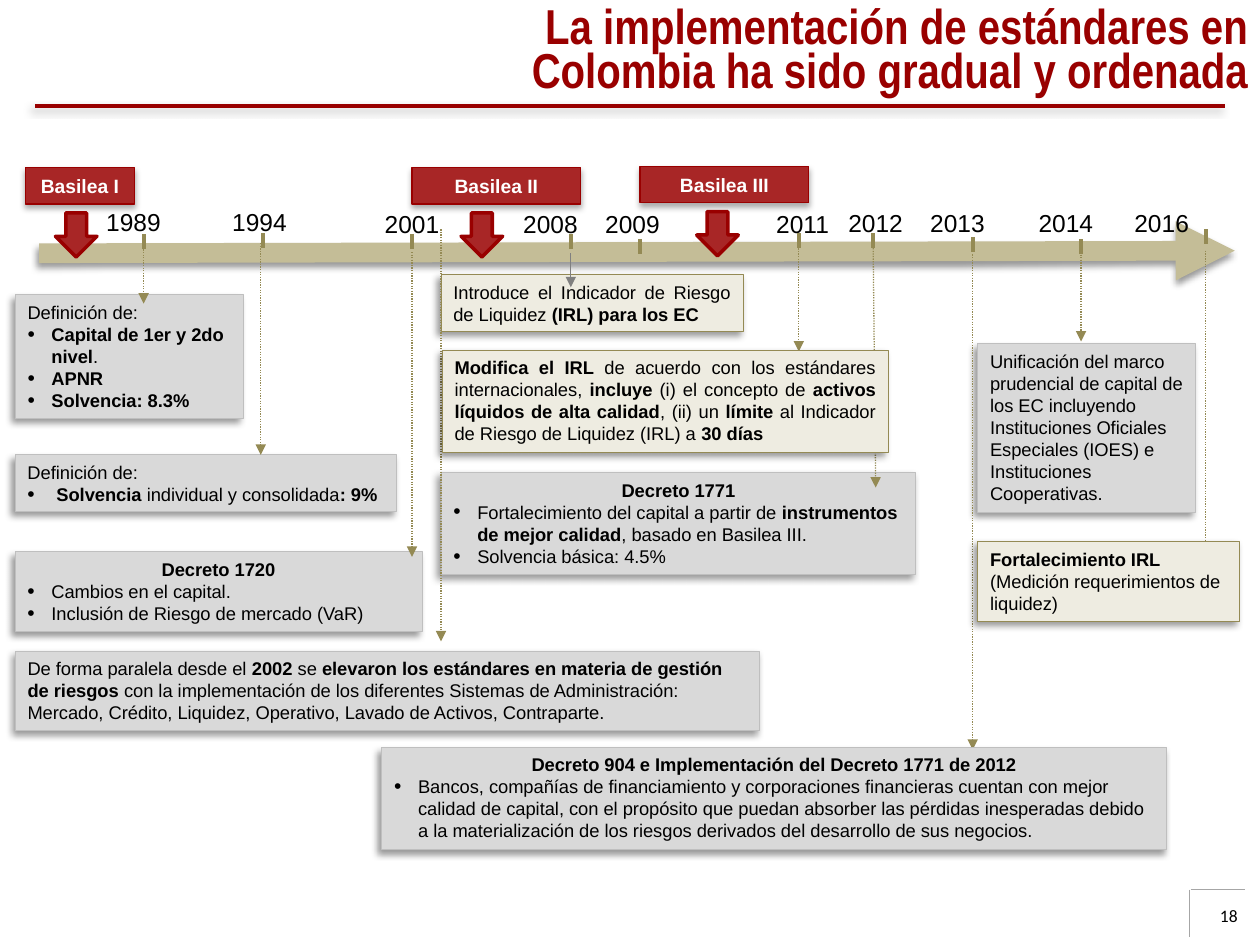
"""Build a timeline slide on the adoption of Basel standards in Colombia."""
from pptx import Presentation
from pptx import util as u
from pptx.dml.color import RGBColor
from pptx.enum import dml, shapes, text
from pptx.oxml import parse_xml
from pptx.oxml.ns import nsdecls, qn

COLORS = {"red": "990000", "label": "A82626", "axis": "C4BD97", "olive": "948A54",
          "gray": "D9D9D9", "edge": "BFBFBF", "cream": "EEECE1", "frame": "A6A6A6",
          "mid": "808080", "black": "000000", "white": "FFFFFF"}
ALIGN = {"l": text.PP_ALIGN.LEFT, "c": text.PP_ALIGN.CENTER,
         "r": text.PP_ALIGN.RIGHT, "j": text.PP_ALIGN.JUSTIFY}
BOX_SHADOW = (4, 3, 135, 40)
LABEL_SHADOW = (3.5, 2.2, 90, 32)


class TimelineSlide:
    """Holds the text style and the slide, and draws each kind of element."""

    def __init__(self, slide, font="Arial", size=10.5):
        self.slide, self.font, self.size = slide, font, size

    def color(self, name):
        return RGBColor.from_string(COLORS[name])

    def effect(self, sp, shadow):
        props = sp._element.spPr
        effects = props.find(qn("a:effectLst"))
        if effects is None:
            effects = parse_xml(f"<a:effectLst {nsdecls('a')}/>")
            props.append(effects)
        if shadow:
            blur, dist, angle, alpha = shadow
            effects.append(parse_xml(
                f'<a:outerShdw {nsdecls("a")} blurRad="{u.Pt(blur)}" dist="{u.Pt(dist)}" '
                f'dir="{angle * 60000}" algn="t" rotWithShape="0"><a:srgbClr val="000000">'
                f'<a:alpha val="{alpha * 1000}"/></a:srgbClr></a:outerShdw>'))

    def line(self, x1, y1, x2, y2, color, width, dotted=False, arrow=False, shadow=None):
        ends = [u.Inches(v) for v in (x1, y1, x2, y2)]
        sp = self.slide.shapes.add_connector(shapes.MSO_CONNECTOR.STRAIGHT, *ends)
        sp.line.color.rgb = self.color(color)
        sp.line.width = u.Pt(width)
        if dotted:
            sp.line.dash_style = dml.MSO_LINE.ROUND_DOT
        if arrow:
            sp._element.spPr.find(qn("a:ln")).append(
                parse_xml(f'<a:tailEnd {nsdecls("a")} type="triangle"/>'))
        self.effect(sp, shadow)

    def shape(self, at, fill, edge, width, kind=shapes.MSO_SHAPE.RECTANGLE, shadow=None):
        sp = self.slide.shapes.add_shape(kind, *[u.Inches(v) for v in at])
        sp.shadow.inherit = False
        sp.fill.solid()
        sp.fill.fore_color.rgb = self.color(fill)
        sp.line.color.rgb = self.color(edge)
        sp.line.width = u.Pt(width)
        self.effect(sp, shadow)
        return sp

    def set_text(self, sp, paragraphs, align="l", size=None, color="black", font=None,
                 anchor=text.MSO_ANCHOR.TOP, indent=0.19):
        """Fill a shape; '* ' starts a bullet, '^ ' centres, '**' toggles bold."""
        tf = sp.text_frame
        tf.word_wrap = True
        tf.vertical_anchor = anchor
        for i, content in enumerate(paragraphs):
            p = tf.paragraphs[0] if i == 0 else tf.add_paragraph()
            p.alignment = ALIGN["c" if content.startswith("^ ") else align]
            if content.startswith("* "):
                self.bullet(p, indent)
            if content[:2] in ("* ", "^ "):
                content = content[2:]
            p.font.name = font or self.font
            p.font.size = u.Pt(size or self.size)
            p.font.color.rgb = self.color(color)
            parts = [(part, n % 2 == 1) for n, part in enumerate(content.split("**")) if part]
            if len(parts) == 1:
                p.font.bold = parts[0][1]
            for part, bold in parts:
                r = p.add_run()
                r.text = part
                if len(parts) > 1:
                    r.font.bold = bold
        return tf

    def bullet(self, p, indent):
        props = p._p.get_or_add_pPr()
        props.set("marL", str(u.Inches(indent)))
        props.set("indent", str(-u.Inches(indent)))
        for tag, value in (("buSzPct val", "115000"), ("buFont typeface", "Arial"),
                           ("buChar char", "•")):
            name, key = tag.split()
            props.append(parse_xml(f'<a:{name} {nsdecls("a")} {key}="{value}"/>'))

    def text(self, at, content, **style):
        sp = self.slide.shapes.add_textbox(*[u.Inches(v) for v in at])
        return self.set_text(sp, [content], **style)

    def note(self, at, paragraphs, fill="gray", **style):
        edge = "edge" if fill == "gray" else "olive"
        self.set_text(self.shape(at, fill, edge, 0.5, shadow=BOX_SHADOW), paragraphs, **style)

    def stage(self, name, left, top, width, arrow_left):
        """Draw a Basel label with its block arrow below."""
        sp = self.shape((left, top, width, 0.29), "label", "red", 0.75, shadow=LABEL_SHADOW)
        self.set_text(sp, [f"**{name}**"], "c", 11, "white", anchor=text.MSO_ANCHOR.MIDDLE)
        self.shape((arrow_left, top + 0.36, 0.33, 0.35), "label", "red", 2,
                   shapes.MSO_SHAPE.DOWN_ARROW)


def main():
    prs = Presentation()
    prs.slide_width, prs.slide_height = u.Inches(10), u.Inches(7.5)
    s = TimelineSlide(prs.slides.add_slide(prs.slide_layouts[6]))

    s.line(0.28, 0.84, 9.72, 0.84, "red", 2, shadow=BOX_SHADOW)
    s.line(9.45, 7.06, 9.88, 7.06, "frame", 0.25)
    s.line(9.44, 7.06, 9.44, 7.44, "frame", 0.25)
    title = s.text((3.5, 0.02, 6.5, 0.81),
                   "**La implementación de estándares en Colombia ha sido gradual y ordenada**",
                   align="r", size=28, color="red", font="Arial Narrow")
    title.paragraphs[0].line_spacing = 0.75
    title.margin_left = u.Inches(0.66)
    s.text((9.3, 7.13, 0.62, 0.4), "18", align="r", size=10, font="Calibri")

    s.line(0.31, 2.01, 9.8, 1.99, "axis", 11.25, arrow=True, shadow=BOX_SHADOW)
    for year, center, top in (
            (1989, 1.06, 1.59), (1994, 2.06, 1.59), (2001, 3.27, 1.61), (2008, 4.37, 1.61),
            (2009, 5.02, 1.61), (2011, 6.37, 1.61), (2012, 6.95, 1.6), (2013, 7.6, 1.6),
            (2014, 8.46, 1.6), (2016, 9.22, 1.6)):
        s.text((center - 0.35, top, 0.7, 0.34), str(year), align="c", size=14)
    for x, y in ((1.14, 1.86), (2.09, 1.85), (3.27, 1.86), (4.53, 1.86), (5.08, 1.9),
                 (6.34, 1.85), (6.93, 1.85), (7.72, 1.88), (8.58, 1.9), (9.57, 1.82)):
        s.line(x, y, x, y + 0.12, "olive", 2.25)
    s.stage("Basilea I", 0.2, 1.33, 0.87, 0.44)
    s.stage("Basilea II", 3.27, 1.33, 1.34, 3.66)
    s.stage("Basilea III", 5.08, 1.32, 1.34, 5.53)

    s.note((0.12, 2.34, 1.81, 0.98),
           ["Definición de:", "* **Capital de 1er y 2do nivel**.", "* **APNR**",
            "* **Solvencia: 8.3%**"])
    s.note((0.12, 3.61, 3.03, 0.45),
           ["Definición de:", "* **Solvencia** individual y consolidada**: 9%**"], indent=0.23)
    s.note((0.12, 4.38, 3.23, 0.63),
           ["^ **Decreto 1720**", "* Cambios en el capital.",
            "* Inclusión de Riesgo de mercado (VaR)"])
    s.note((3.5, 3.75, 3.77, 0.81),
           ["^ **Decreto 1771**",
            "* Fortalecimiento del capital a partir de **instrumentos de mejor calidad**, "
            "basado en Basilea III.",
            "* Solvencia básica: 4.5%"])
    s.note((7.76, 2.73, 1.73, 1.34),
           ["Unificación del marco prudencial de capital de los EC incluyendo Instituciones "
            "Oficiales Especiales (IOES) e Instituciones Cooperativas."])
    s.note((3.5, 2.18, 2.4, 0.45),
           ["Introduce el Indicador de Riesgo de Liquidez **(IRL) para los EC**"],
           "cream", align="j")
    s.note((0.12, 5.17, 5.91, 0.63),
           ["De forma paralela desde el **2002 **se **elevaron los estándares en materia de "
            "gestión de riesgos **con la implementación de los diferentes Sistemas de "
            "Administración:",
            "Mercado, Crédito, Liquidez, Operativo, Lavado de Activos, Contraparte."])

    for x1, y1, x2, y2 in (
            (1.14, 1.98, 1.14, 2.41), (2.07, 1.93, 2.07, 3.61), (3.27, 2, 3.27, 4.42),
            (3.5, 1.82, 3.5, 5.09), (6.34, 1.93, 6.34, 2.79), (6.93, 1.97, 6.95, 3.87),
            (7.72, 2.02, 7.72, 5.95), (8.58, 2, 8.58, 2.71), (9.57, 1.99, 9.57, 4.42)):
        s.line(x1, y1, x2, y2, "olive", 0.75, dotted=True, arrow=True)
    s.line(4.53, 2.01, 4.53, 2.28, "mid", 0.75, arrow=True)

    s.note((3.51, 2.78, 3.54, 0.81),
           ["**Modifica el IRL **de acuerdo con los estándares internacionales, **incluye** (i) "
            "el concepto de **activos líquidos de alta calidad**, (ii) un **límite **al "
            "Indicador de Riesgo de Liquidez (IRL) a **30 días**"], "cream", align="j")
    s.note((3.03, 5.93, 6.23, 0.81),
           ["^ **Decreto 904 e Implementación del Decreto 1771 de 2012**",
            "* Bancos, compañías de financiamiento y corporaciones financieras cuentan con "
            "mejor calidad de capital, con el propósito que puedan absorber las pérdidas "
            "inesperadas debido a la materialización de los riesgos derivados del desarrollo "
            "de sus negocios."])
    s.note((7.76, 4.3, 2.08, 0.63),
           ["**Fortalecimiento IRL **(Medición requerimientos de liquidez)"], "cream")
    prs.save("out.pptx")


if __name__ == "__main__":
    main()
